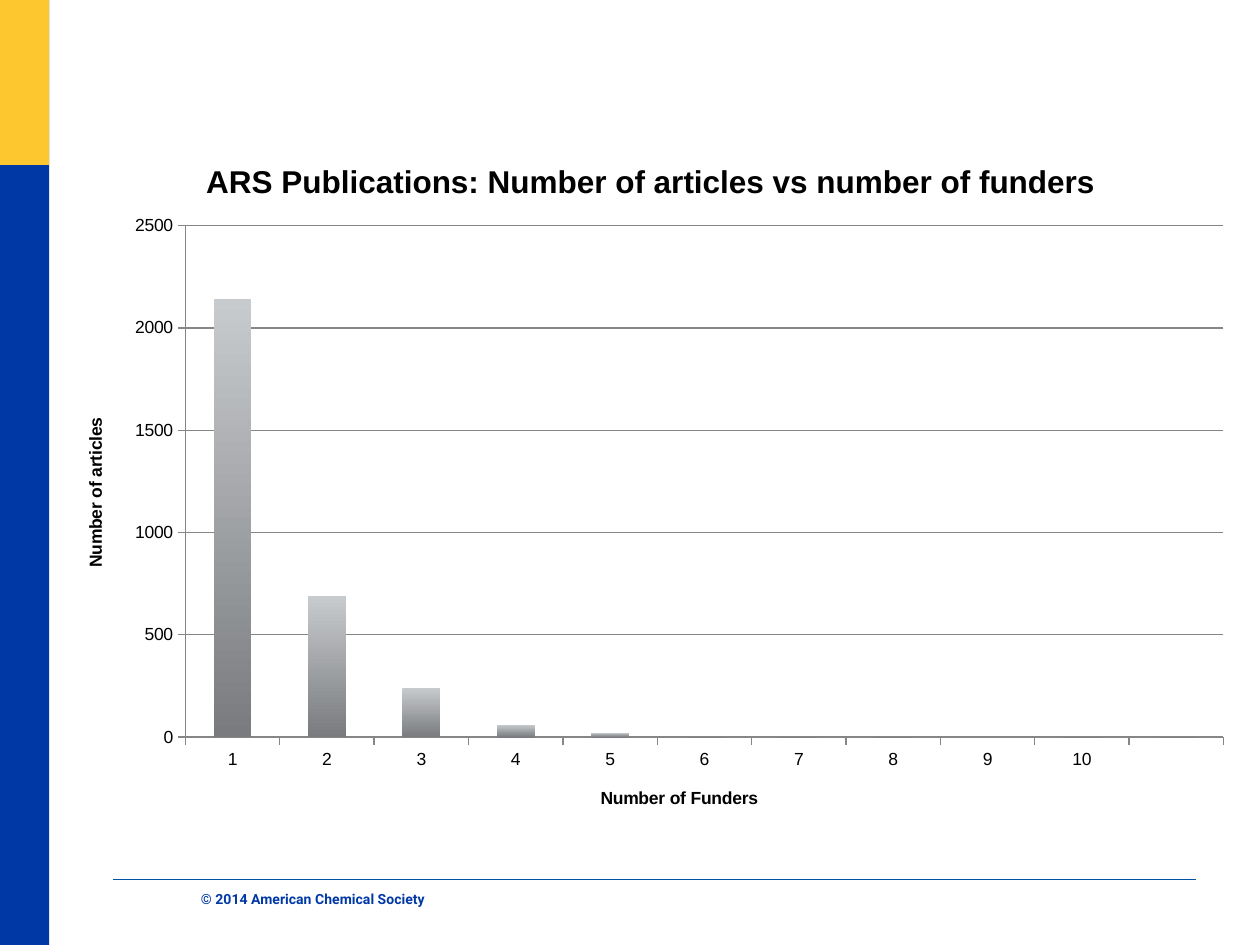
from dataclasses import dataclass

from lxml.etree import SubElement
from pptx import Presentation
from pptx.chart.data import CategoryChartData
from pptx.dml.color import RGBColor
from pptx.enum.chart import XL_CHART_TYPE, XL_TICK_MARK
from pptx.enum.shapes import MSO_CONNECTOR, MSO_SHAPE
from pptx.enum.text import PP_ALIGN
from pptx.oxml import parse_xml
from pptx.oxml.ns import nsdecls, qn
from pptx.util import Inches, Pt


@dataclass(frozen=True)
class Theme:
    blue: RGBColor = RGBColor(0x00, 0x39, 0xA6)
    gold: RGBColor = RGBColor(0xFD, 0xC8, 0x2F)
    rule: RGBColor = RGBColor(0x00, 0x54, 0xA6)
    grid: RGBColor = RGBColor(0x86, 0x86, 0x86)
    light: RGBColor = RGBColor(0xC8, 0xCB, 0xCD)
    dark: RGBColor = RGBColor(0x79, 0x7B, 0x7E)
    black: RGBColor = RGBColor(0, 0, 0)
    head: Pt = Pt(18)
    label: Pt = Pt(10)
    small: Pt = Pt(8)


THEME = Theme()
VALUES = [2140, 690, 240, 60, 20, 0, 0, 0, None, 0, 0]


def style(item, **values):
    for name, value in values.items():
        setattr(item, name, value)


def set_font(font, color, **values):
    style(font, **values)
    font.color.rgb = color


def add_band(slide, box, color):
    band = slide.shapes.add_shape(MSO_SHAPE.RECTANGLE, *map(Inches, box))
    band.shadow.inherit = False
    band.fill.solid()
    band.fill.fore_color.rgb = color
    band.line.fill.background()


def add_side(slide, box):
    left, top, width, height = box
    add_band(slide, box, THEME.blue)
    add_band(slide, (left, top, width, 1.31), THEME.gold)


def add_foot(slide, box):
    left, top, width, height = box
    # Rule above the notice
    rule = slide.shapes.add_connector(
        MSO_CONNECTOR.STRAIGHT, Inches(left), Inches(top),
        Inches(left + width), Inches(top))
    rule.line.color.rgb = THEME.rule
    rule.line.width = Pt(0.75)
    SubElement(rule._element.spPr, qn("a:effectLst"))
    # Copyright notice
    note = slide.shapes.add_textbox(
        Inches(left), Inches(top + 0.09), Inches(3.17), Inches(height - 0.09))
    frame = note.text_frame
    style(frame, word_wrap=True, margin_left=0, margin_right=0,
          margin_top=0, margin_bottom=0)
    para = frame.paragraphs[0]
    para.alignment = PP_ALIGN.CENTER
    run = para.add_run()
    run.text = "© 2014 American Chemical Society"
    set_font(run.font, THEME.blue, name="Roboto", size=THEME.small, bold=True)


def set_title(owner, text, size):
    frame = (owner.chart_title if hasattr(owner, "chart_title")
             else owner.axis_title).text_frame
    frame.text = text
    set_font(frame.paragraphs[0].runs[0].font, THEME.black,
             name="Arial", size=size, bold=True)


def set_plot(chart, box):
    tags = "".join(f'<c:{tag} val="{value}"/>' for tag, value in
                   zip(("x", "y", "w", "h"), box))
    area = chart._chartSpace.chart.plotArea
    for old in area.findall(qn("c:layout")):
        area.remove(old)
    area.insert(0, parse_xml(
        f'<c:layout {nsdecls("c")}><c:manualLayout>'
        '<c:layoutTarget val="inner"/><c:xMode val="edge"/>'
        f'<c:yMode val="edge"/>{tags}</c:manualLayout></c:layout>'))


def add_graph(slide, box):
    data = CategoryChartData()
    # The last category has no label
    data.categories = [str(n) for n in range(1, len(VALUES))] + [""]
    data.add_series("Series 1", VALUES)
    chart = slide.shapes.add_chart(
        XL_CHART_TYPE.COLUMN_CLUSTERED, *map(Inches, box), data).chart
    chart.has_legend = False
    set_font(chart.font, THEME.black, name="Arial", size=THEME.label)
    set_title(chart, "ARS Publications: Number of articles vs number of funders",
              THEME.head)
    set_plot(chart, (0.11, 0.13, 0.87, 0.73))

    # Axes
    horiz, vert = chart.category_axis, chart.value_axis
    style(vert, minimum_scale=0, maximum_scale=2500, major_unit=500,
          has_major_gridlines=True)
    set_title(horiz, "Number of Funders", THEME.label)
    set_title(vert, "Number of articles", THEME.label)
    for axis in (horiz, vert):
        axis.major_tick_mark = XL_TICK_MARK.OUTSIDE
    for part in (horiz, vert, vert.major_gridlines):
        part.format.line.color.rgb = THEME.grid
        part.format.line.width = Pt(0.75)

    # Columns
    plot = chart.plots[0]
    style(plot, gap_width=150, vary_by_categories=False)
    fill = plot.series[0].format.fill
    fill.gradient()
    fill.gradient_angle = 270
    for stop, color in zip(fill.gradient_stops, (THEME.light, THEME.dark)):
        stop.color.rgb = color


def main():
    deck = Presentation()
    style(deck, slide_width=Inches(10), slide_height=Inches(7.5))
    slide = deck.slides.add_slide(deck.slide_layouts[6])
    add_side(slide, (0, 0, 0.39, 7.5))
    add_foot(slide, (0.9, 6.98, 8.59, 0.4))
    add_graph(slide, (0.43, 1.07, 9.47, 5.56))
    deck.save("out.pptx")


if __name__ == "__main__":
    main()
